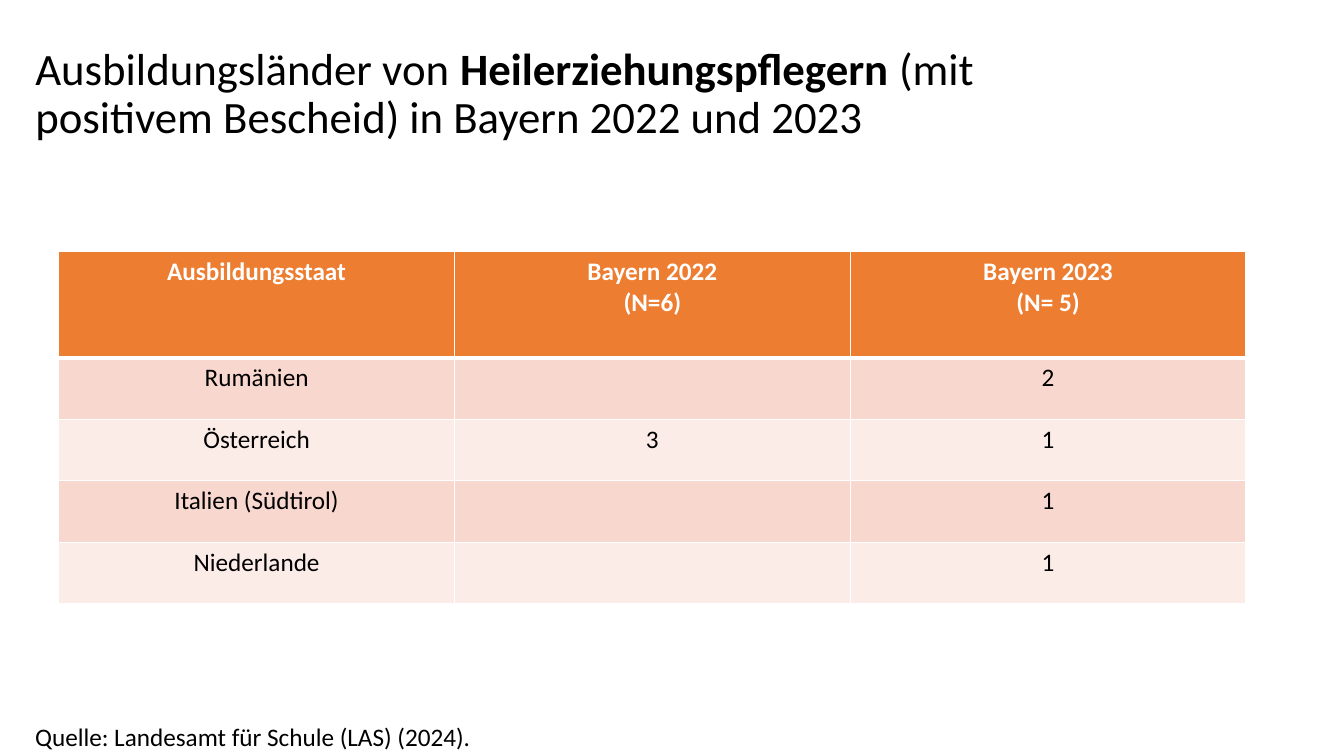
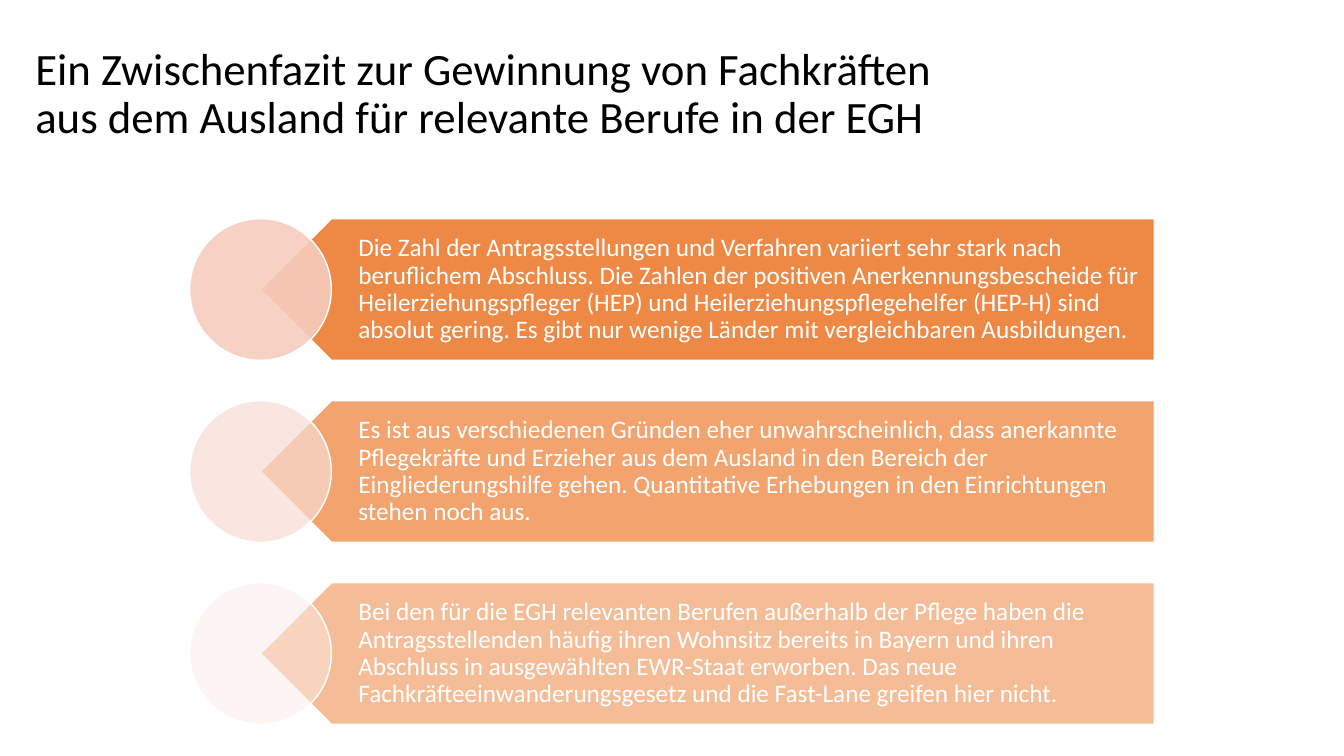
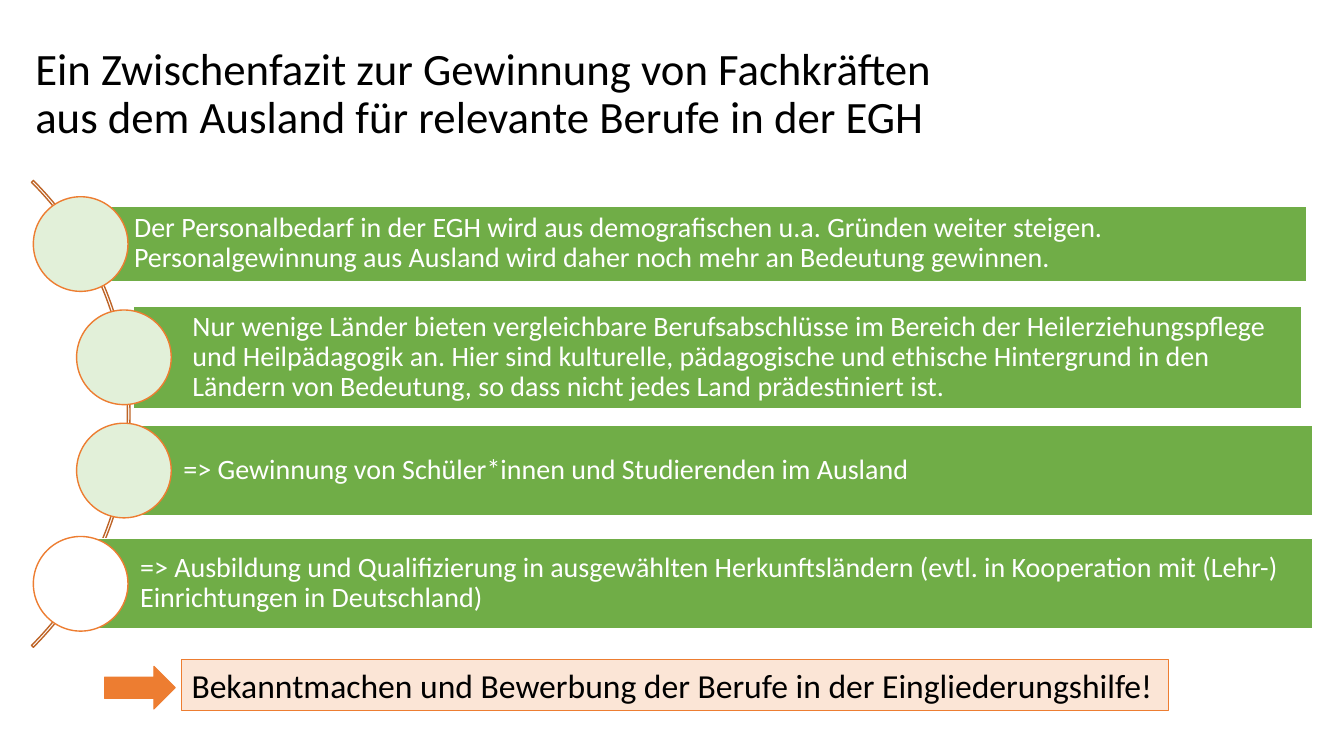
from collections import namedtuple

import pptx
import pptx.dml.color
import pptx.enum.shapes
import pptx.enum.text
import pptx.oxml
import pptx.oxml.ns
import pptx.util

Pt = pptx.util.Pt
RGBColor = pptx.dml.color.RGBColor
Shapes = pptx.enum.shapes.MSO_SHAPE
Align = pptx.enum.text.PP_ALIGN
Anchor = pptx.enum.text.MSO_ANCHOR
qn = pptx.oxml.ns.qn

FONT = "Calibri"
BLACK = RGBColor(0x00, 0x00, 0x00)
WHITE = RGBColor(0xFF, 0xFF, 0xFF)
ORANGE = RGBColor(0xED, 0x7D, 0x31)
DARK_ORANGE = RGBColor(0xBE, 0x64, 0x27)
PALE_ORANGE = RGBColor(0xFB, 0xE5, 0xD6)
ROSE = RGBColor(0xF6, 0xCC, 0xBE)
LIGHT_ROSE = RGBColor(0xF9, 0xDC, 0xD4)
PALE_ROSE = RGBColor(0xFC, 0xEC, 0xE8)
BAND_ROSE = RGBColor(0xF8, 0xD7, 0xCE)
GREEN = RGBColor(0x70, 0xAD, 0x47)
PALE_GREEN = RGBColor(0xE2, 0xF0, 0xD9)

Box = namedtuple("Box", "left top width height")
TITLE_BOX = Box(18, 16, 803, 104)
SUMMARY_TITLE = [("Ein Zwischenfazit zur Gewinnung von Fachkräften \n"
                  "aus dem Ausland für relevante Berufe in der EGH", False)]


def points(box):
    return [Pt(value) for value in box]


def write(frame, runs, size, color, align=Align.LEFT, spacing=1.0):
    para = frame.paragraphs[0]
    para.alignment = align
    para.line_spacing = spacing
    for text, bold in runs:
        for number, line in enumerate(text.split("\n")):
            if number:
                para.add_line_break()
            span = para.add_run()
            span.text = line
            span.font.name = FONT
            span.font.size = Pt(size)
            span.font.bold = bold
            span.font.color.rgb = color


def set_frame(frame, anchor, insets, wrap=True):
    frame.word_wrap = wrap
    frame.auto_size = pptx.enum.text.MSO_AUTO_SIZE.NONE
    frame.vertical_anchor = anchor
    (frame.margin_left, frame.margin_top,
     frame.margin_right, frame.margin_bottom) = points(insets)


def add_text(page, box, text, size, color, anchor, insets, spacing=1.0):
    frame = page.shapes.add_textbox(*points(box)).text_frame
    set_frame(frame, anchor, insets)
    write(frame, [(text, False)], size, color, spacing=spacing)


def add_shape(page, kind, box, fill, line, line_width=1, opacity=100):
    shape = page.shapes.add_shape(kind, *points(box))
    shape.shadow.inherit = False
    shape.line.color.rgb = line
    shape.line.width = Pt(line_width)
    if fill is None:
        shape.fill.background()
        return shape
    shape.fill.solid()
    shape.fill.fore_color.rgb = fill
    if opacity < 100:
        color = shape.fill._xPr.find(qn("a:solidFill"))[0]
        alpha = pptx.oxml.parse_xml(
            f'<a:alpha {pptx.oxml.ns.nsdecls("a")} val="{opacity * 1000}"/>')
        color.append(alpha)
    return shape


def add_page(deck, title_runs):
    page = deck.slides.add_slide(deck.slide_layouts[5])
    title = page.shapes.title
    title.left, title.top, title.width, title.height = points(TITLE_BOX)
    set_frame(title.text_frame, Anchor.MIDDLE, (7.2, 3.6, 7.2, 3.6))
    write(title.text_frame, title_runs, 32, BLACK, spacing=0.9)
    return page


def set_borders(cell, top, bottom):
    widths = {"L": 1, "R": 1, "T": top, "B": bottom}
    for place, (side, width) in enumerate(widths.items()):
        border = pptx.oxml.parse_xml(
            f'<a:ln{side} {pptx.oxml.ns.nsdecls("a")} w="{Pt(width)}">'
            f'<a:solidFill><a:srgbClr val="{WHITE}"/></a:solidFill></a:ln{side}>')
        cell._tc.get_or_add_tcPr().insert(place, border)


def add_country_table(page, box, rows, header_height):
    columns = len(rows[0])
    table = page.shapes.add_table(len(rows), columns, *points(box)).table
    body_height = (box.height - header_height) / (len(rows) - 1)
    for column in table.columns:
        column.width = Pt(box.width / columns)
    for row_number, row in enumerate(rows):
        header = row_number == 0
        table.rows[row_number].height = Pt(header_height if header else body_height)
        fill = ORANGE if header else (PALE_ROSE, BAND_ROSE)[row_number % 2]
        for column_number, text in enumerate(row):
            cell = table.cell(row_number, column_number)
            cell.fill.solid()
            cell.fill.fore_color.rgb = fill
            set_borders(cell, 3 if row_number == 1 else 1, 3 if header else 1)
            if text:
                write(cell.text_frame, [(text, header)], 18,
                      WHITE if header else BLACK, Align.CENTER)


def add_pentagon_row(page, box, text, opacity, circle_fill):
    size = box.height
    plate_box = Box(box.left + size / 2, box.top, box.width - size / 2, size)
    plate = add_shape(page, Shapes.PENTAGON, plate_box, ORANGE, WHITE, opacity=opacity)
    plate.rotation = 180
    text_left = box.left + 0.75 * size
    text_box = Box(text_left, box.top, box.left + box.width - text_left, size)
    add_text(page, text_box, text, 18, WHITE, Anchor.MIDDLE, (44.6, 5, 9.8, 5), 0.9)
    add_shape(page, Shapes.OVAL, Box(box.left, box.top, size, size),
              circle_fill, WHITE, opacity=opacity)


def add_arc(page, box):
    arc = add_shape(page, Shapes.BLOCK_ARC, box, None, DARK_ORANGE)
    for number, value in enumerate((189, 27, 0.004)):
        arc.adjustments[number] = value


def add_bar(page, box, text, circle_box, circle_fill):
    bar = add_shape(page, Shapes.RECTANGLE, box, GREEN, WHITE)
    set_frame(bar.text_frame, Anchor.MIDDLE, (42.5, 4.3, 4.3, 4.3))
    write(bar.text_frame, [(text, False)], 20, WHITE, spacing=0.9)
    add_shape(page, Shapes.OVAL, circle_box, circle_fill, ORANGE)


def add_callout(page, box, text):
    add_shape(page, Shapes.RIGHT_ARROW, Box(box.left, box.top + 5, 50.5, 30.5),
              ORANGE, ORANGE, 0.75)
    label_box = Box(box.left + 55, box.top, box.width - 55, box.height)
    label = add_shape(page, Shapes.RECTANGLE, label_box, PALE_ORANGE, ORANGE, 0.75)
    set_frame(label.text_frame, Anchor.MIDDLE, (7.2, 3.6, 7.2, 3.6), False)
    write(label.text_frame, [(text, False)], 24, BLACK)


def build_countries(deck):
    page = add_page(deck, [
        ("Ausbildungsländer von ", False),
        ("Heilerziehungspflegern", True),
        (" (mit \npositivem Bescheid) in Bayern 2022 und 2023", False)])
    add_text(page, Box(18, 512, 794, 28), "Quelle: Landesamt für Schule (LAS) (2024).",
             18, BLACK, Anchor.TOP, (7.2, 3.6, 7.2, 3.6))
    add_country_table(page, Box(42, 179.5, 848, 252), [
        ("Ausbildungsstaat", "Bayern 2022\n(N=6)", "Bayern 2023\n(N= 5)"),
        ("Rumänien", "", "2"),
        ("Österreich", "3", "1"),
        ("Italien (Südtirol)", "", "1"),
        ("Niederlande", "", "1")], 76)


def build_findings(deck):
    page = add_page(deck, SUMMARY_TITLE)
    findings = [
        ("Die Zahl der Antragsstellungen und Verfahren variiert sehr stark nach "
         "beruflichem Abschluss. Die Zahlen der positiven Anerkennungsbescheide für "
         "Heilerziehungspfleger (HEP) und Heilerziehungspflegehelfer (HEP-H) sind "
         "absolut gering. Es gibt nur wenige Länder mit vergleichbaren Ausbildungen.",
         90, ROSE),
        ("Es ist aus verschiedenen Gründen eher unwahrscheinlich, dass anerkannte "
         "Pflegekräfte und Erzieher aus dem Ausland in den Bereich der "
         "Eingliederungshilfe gehen. Quantitative Erhebungen in den Einrichtungen "
         "stehen noch aus.", 70, LIGHT_ROSE),
        ("Bei den für die EGH relevanten Berufen außerhalb der Pflege haben die "
         "Antragsstellenden häufig ihren Wohnsitz bereits in Bayern und ihren "
         "Abschluss in ausgewählten EWR-Staat erworben. Das neue "
         "Fachkräfteeinwanderungsgesetz und die Fast-Lane greifen hier nicht.",
         50, PALE_ROSE)]
    for number, (text, opacity, circle_fill) in enumerate(findings):
        add_pentagon_row(page, Box(135.5, 156.2 + 130 * number, 689, 101.2),
                         text, opacity, circle_fill)


def build_outlook(deck):
    page = add_page(deck, SUMMARY_TITLE)
    add_arc(page, Box(-378.7, 59.8, 471.6, 471.6))
    bars = [
        (Box(53.3, 147, 880, 54), 23.8, PALE_GREEN,
         "Der Personalbedarf in der EGH wird aus demografischen u.a. Gründen weiter "
         "steigen. Personalgewinnung aus Ausland wird daher noch mehr an Bedeutung "
         "gewinnen."),
        (Box(95, 218.5, 835.2, 73.4), 54.7, PALE_GREEN,
         "Nur wenige Länder bieten vergleichbare Berufsabschlüsse im Bereich der "
         "Heilerziehungspflege und Heilpädagogik an. Hier sind kulturelle, "
         "pädagogische und ethische Hintergrund in den Ländern von Bedeutung, so dass "
         "nicht jedes Land prädestiniert ist."),
        (Box(88.5, 304, 849.5, 64.5), 54.7, PALE_GREEN,
         "=> Gewinnung von Schüler*innen und Studierenden im Ausland"),
        (Box(57.6, 384.7, 880, 64.5), 23.8, WHITE,
         "=> Ausbildung und Qualifizierung in ausgewählten Herkunftsländern (evtl. in "
         "Kooperation mit (Lehr-) Einrichtungen in Deutschland)")]
    for number, (box, circle_left, circle_fill, text) in enumerate(bars):
        circle_box = Box(circle_left, 140.5 + 80.9 * number, 67.6, 67.6)
        add_bar(page, box, text, circle_box, circle_fill)
    add_callout(page, Box(74.7, 471, 760, 36.5),
                "Bekanntmachen und Bewerbung der Berufe in der Eingliederungshilfe!")


def main():
    deck = pptx.Presentation()
    deck.slide_width = Pt(960)
    deck.slide_height = Pt(540)
    build_countries(deck)
    build_findings(deck)
    build_outlook(deck)
    deck.save("out.pptx")


if __name__ == "__main__":
    main()
